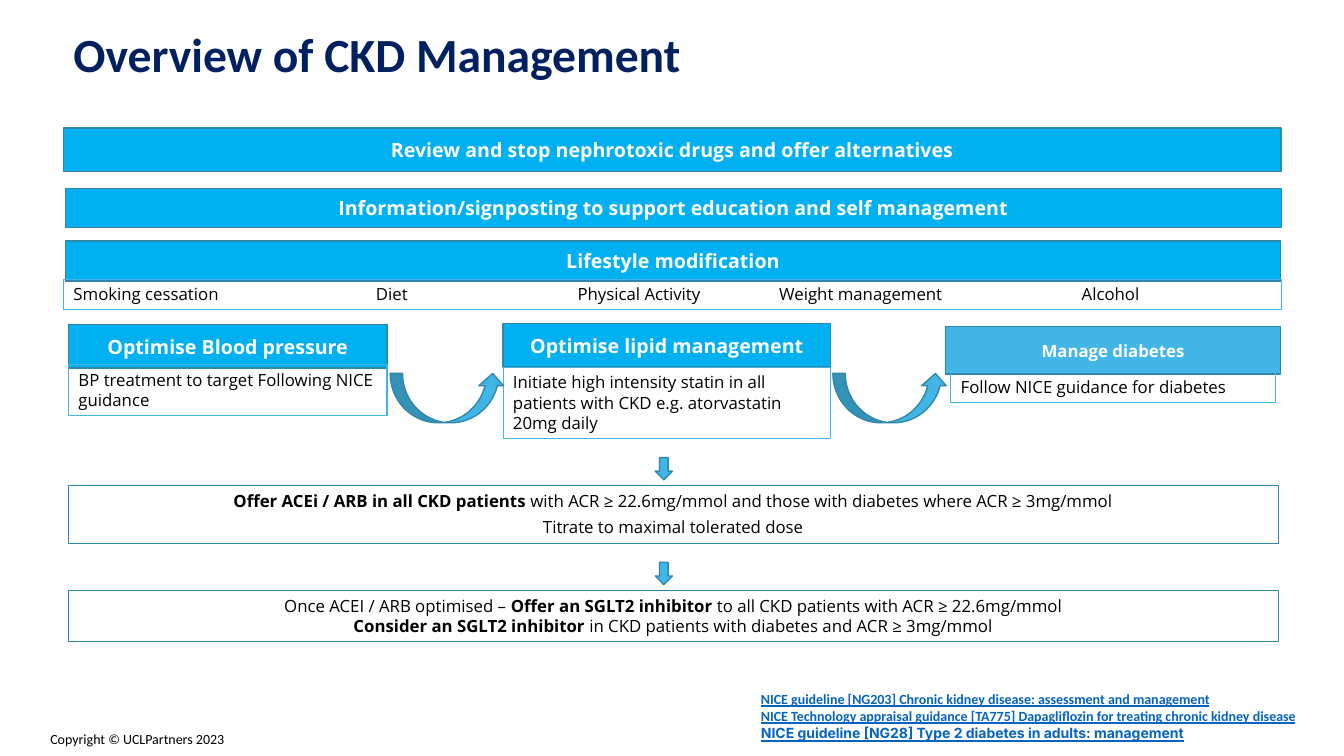
import pptx
import pptx.dml.color
import pptx.enum.shapes
import pptx.enum.text
import pptx.oxml
import pptx.oxml.ns
import pptx.util
from collections import namedtuple

SLIDE_WIDTH, SLIDE_HEIGHT = 13.33, 7.5
COLORS = {
    "navy": "002060", "bright": "00B0F0", "sky": "42B6E6", "arrow": "41B6E6",
    "edge": "3087AA", "white": "FFFFFF", "black": "000000", "link": "0563C1",
}
SHAPES = pptx.enum.shapes.MSO_SHAPE
ALIGN = pptx.enum.text.PP_ALIGN
ANCHOR = pptx.enum.text.MSO_ANCHOR

# Boxes are percentages of the slide's width and height
Box = namedtuple("Box", "left top width height")


def color(name):
    return pptx.dml.color.RGBColor.from_string(COLORS[name])


def place(box):
    return [pptx.util.Inches(share / 100 * side) for share, side in
            zip(box, (SLIDE_WIDTH, SLIDE_HEIGHT) * 2)]


def add_span(para, text, size, font="Open Sans", tint="black", bold=False, underline=False):
    span = para.add_run()
    span.text = text
    span.font.size = pptx.util.Pt(size)
    span.font.name = font
    span.font.bold = bold
    span.font.underline = underline
    span.font.color.rgb = color(tint)


def add_paragraph(frame, index, align=ALIGN.LEFT):
    para = frame.add_paragraph() if index else frame.paragraphs[0]
    para.alignment = align
    return para


def add_figure(page, kind, box, fill=None, line="edge", weight=1):
    figure = page.shapes.add_shape(kind, *place(box))
    figure.shadow.inherit = False
    if fill:
        figure.fill.solid()
        figure.fill.fore_color.rgb = color(fill)
    else:
        figure.fill.background()
    figure.line.color.rgb = color(line)
    figure.line.width = pptx.util.Pt(weight)
    return figure


def add_text_box(page, box, wrap=True):
    frame = page.shapes.add_textbox(*place(box)).text_frame
    frame.word_wrap = wrap
    return frame


def add_banner(page, box, text, fill="bright", size=14):
    frame = add_figure(page, SHAPES.RECTANGLE, box, fill).text_frame
    frame.vertical_anchor = ANCHOR.MIDDLE
    add_span(add_paragraph(frame, 0, ALIGN.CENTER), text, size, tint="white", bold=True)


def add_panel(page, box, line="arrow"):
    frame = add_figure(page, SHAPES.RECTANGLE, box, line=line, weight=0.75).text_frame
    frame.word_wrap = True
    frame.vertical_anchor = ANCHOR.TOP
    return frame


def add_title(page, box, text):
    para = add_paragraph(add_text_box(page, box), 0)
    para.line_spacing = 0.9
    add_span(para, text, 34, "Calibri", "navy", bold=True)


def add_lifestyle_options(page, box, options, stops):
    para = add_paragraph(add_panel(page, box), 0)
    tabs = pptx.oxml.parse_xml(f"<a:tabLst {pptx.oxml.ns.nsdecls('a')}/>")
    for stop in stops:
        tab = tabs.makeelement(pptx.oxml.ns.qn("a:tab"))
        tab.set("pos", str(pptx.util.Inches(stop)))
        tab.set("algn", "l")
        tabs.append(tab)
    para._p.get_or_add_pPr().append(tabs)
    add_span(para, "\t".join(options), 12)


def add_care_column(page, box, title, advice, head, start, inset=0, fill="bright", size=14):
    """Heading and advice; head, start and inset are shares of the box."""
    add_banner(page, box._replace(height=box.height * head), title, fill, size)
    body = Box(box.left + box.width * inset, box.top + box.height * start,
               box.width * (1 - 2 * inset), box.height * (1 - start))
    add_span(add_paragraph(add_panel(page, body), 0), advice, 12)


def add_treatment_step(page, box, lines, gap=0):
    """Arrow just above the box, then centred lines of (text, bold) spans."""
    arrow = Box(box.left + box.width * 0.485, box.top - 3.73, 1.28, 2.93)
    add_figure(page, SHAPES.DOWN_ARROW, arrow, "arrow")
    frame = add_panel(page, box, "edge")
    for index, spans in enumerate(lines):
        para = add_paragraph(frame, index, ALIGN.CENTER)
        if index and gap:
            para.space_before = pptx.util.Pt(gap)
        for text, bold in spans:
            add_span(para, text, 12, bold=bold)


def add_references(page, box, references):
    frame = add_text_box(page, box)
    for index, (text, font) in enumerate(references):
        add_span(add_paragraph(frame, index), text, 10, font, "link", bold=True, underline=True)


def build_overview(page):
    add_title(page, Box(4.73, 3.47, 55.35, 8.53), "Overview of CKD Management")

    # Measures for every patient
    for box, text in (
        (Box(4.73, 16.93, 90.6, 5.73), "Review and stop nephrotoxic drugs and offer alternatives"),
        (Box(4.88, 24.93, 90.45, 5.2),
         "Information/signposting to support education and self management"),
        (Box(4.88, 31.87, 90.4, 5.33), "Lifestyle modification"),
    ):
        add_banner(page, box, text)
    add_lifestyle_options(
        page, Box(4.73, 36.93, 90.6, 4),
        ("Smoking cessation", "Diet", "Physical Activity", "Weight management", "Alcohol"),
        (3, 5, 7, 10))

    # Blood pressure, lipids and diabetes
    add_care_column(page, Box(5.1, 42.93, 23.7, 12), "Optimise Blood pressure",
                    "BP treatment to target Following NICE guidance", 0.48, 0.44)
    add_care_column(page, Box(37.43, 42.8, 24.38, 15.2), "Optimise lipid management",
                    "Initiate high intensity statin in all patients with CKD "
                    "e.g. atorvastatin 20mg daily", 0.38, 0.38)
    add_care_column(page, Box(70.37, 43.2, 24.9, 10), "Manage diabetes",
                    "Follow NICE guidance for diabetes", 0.63, 0.6, 0.015, "sky", 12)
    for left in (29.03, 61.97):
        add_figure(page, SHAPES.CURVED_UP_ARROW, Box(left, 49.4, 8.55, 6.53), "arrow")

    # Treatment steps
    add_treatment_step(page, Box(5.1, 64.27, 90, 7.6), (
        (("Offer ACEi / ARB in all CKD patients ", True),
         ("with ACR ≥ 22.6mg/mmol and those with diabetes where ACR ≥ 3mg/mmol", False)),
        (("Titrate to maximal tolerated dose", False),),
    ), gap=4)
    add_treatment_step(page, Box(5.1, 78.13, 90, 6.67), (
        (("Once ACEI / ARB optimised – ", False), ("Offer an SGLT2 inhibitor ", True),
         ("to all CKD patients with ACR ≥ 22.6mg/mmol", False)),
        (("Consider an SGLT2 inhibitor ", True),
         ("in CKD patients with diabetes and ACR ≥ 3mg/mmol", False)),
    ))

    # Footer
    add_references(page, Box(55.88, 90.67, 43.28, 8.13), (
        ("NICE guideline [NG203] Chronic kidney disease: assessment and management", "Calibri"),
        ("NICE Technology appraisal guidance [TA775] Dapagliflozin for treating "
         "chronic kidney disease", "Calibri"),
        ("NICE guideline [NG28] Type 2 diabetes in adults: management", "Inter"),
    ))
    copyright_frame = add_text_box(page, Box(3, 96, 14.7, 3.6), wrap=False)
    add_span(add_paragraph(copyright_frame, 0), "Copyright © UCLPartners 2023", 10, "Calibri")


def main():
    deck = pptx.Presentation()
    deck.slide_width = pptx.util.Inches(SLIDE_WIDTH)
    deck.slide_height = pptx.util.Inches(SLIDE_HEIGHT)
    build_overview(deck.slides.add_slide(deck.slide_layouts[6]))
    deck.save("out.pptx")


if __name__ == "__main__":
    main()
